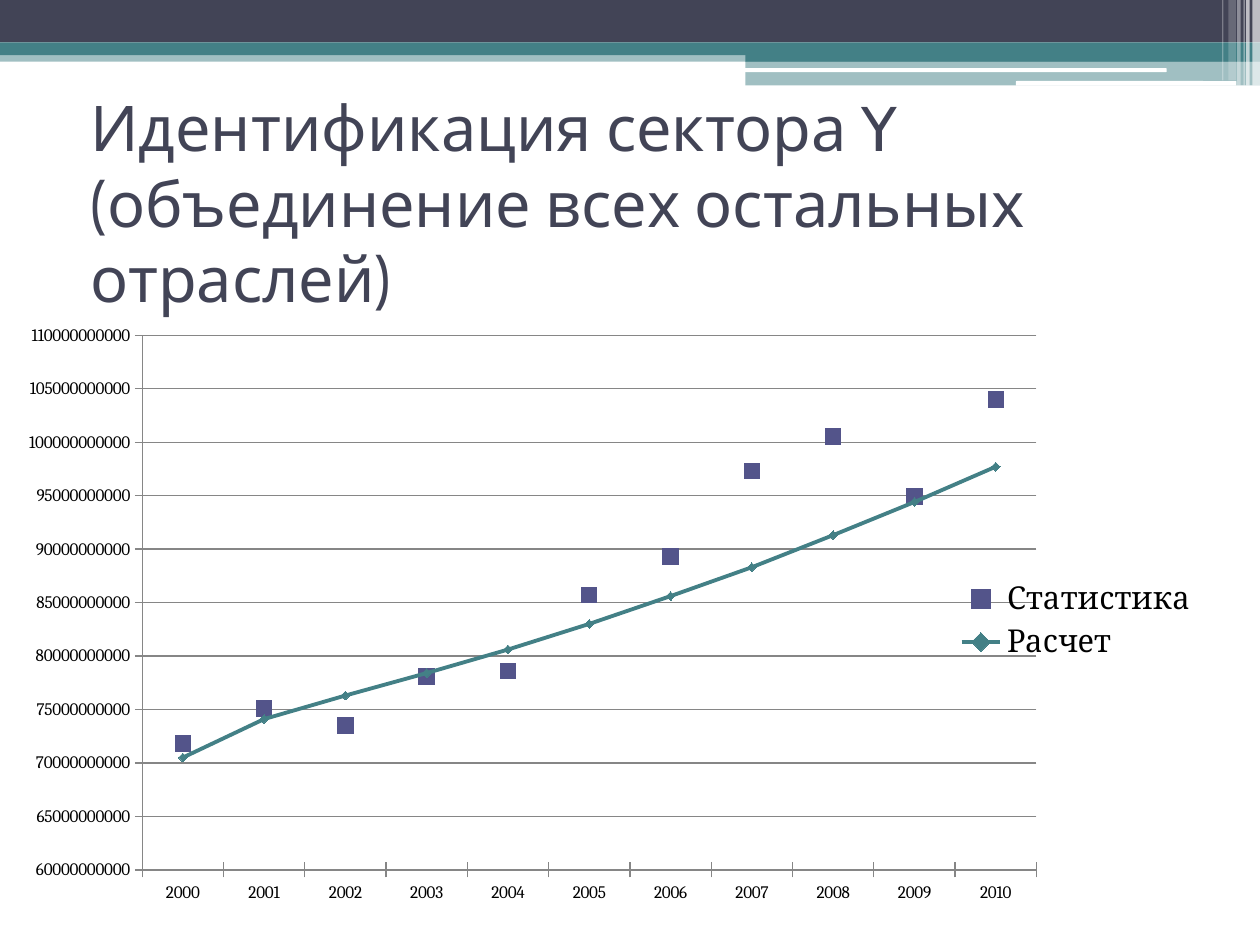
from pptx import Presentation
from pptx.chart.data import CategoryChartData
from pptx.dml.color import RGBColor
from pptx.enum.chart import XL_CHART_TYPE, XL_LEGEND_POSITION, XL_MARKER_STYLE, XL_TICK_MARK
from pptx.enum.shapes import MSO_SHAPE
from pptx.enum.text import MSO_ANCHOR, MSO_AUTO_SIZE, PP_ALIGN
from pptx.oxml import parse_xml
from pptx.oxml.ns import nsdecls, qn
from pptx.util import Pt
from lxml import etree

RECT, ROUND = MSO_SHAPE.RECTANGLE, MSO_SHAPE.ROUNDED_RECTANGLE
SQUARE, DIAMOND = XL_MARKER_STYLE.SQUARE, XL_MARKER_STYLE.DIAMOND
LINE, RIGHT = XL_CHART_TYPE.LINE_MARKERS, XL_LEGEND_POSITION.RIGHT
CROSS = XL_TICK_MARK.CROSS
MIDDLE, LEFT, FIXED = MSO_ANCHOR.MIDDLE, PP_ALIGN.LEFT, MSO_AUTO_SIZE.NONE

WHITE = RGBColor(0xFF, 0xFF, 0xFF)
BLACK = RGBColor(0, 0, 0)
SLATE = RGBColor(0x42, 0x44, 0x56)
TEAL = RGBColor(0x43, 0x80, 0x86)
VIOLET = RGBColor(0x53, 0x54, 0x8A)
GRAY = RGBColor(0x86, 0x86, 0x86)

BANDS = [
    (RECT, 0, 28.8, 720, 6.5, TEAL, 50),
    (RECT, 0, 0, 720, 24.3, SLATE, 100),
    (RECT, 0, 24.3, 720, 7.2, TEAL, 100),
    (RECT, 426, 28.1, 294, 7.2, TEAL, 100),
    (RECT, 426, 34.9, 294, 14, TEAL, 50),
    (ROUND, 425.5, 39, 241.2, 2.2, WHITE, 100),
    (ROUND, 580.5, 46.3, 126, 2.7, WHITE, 100),
]
STRIPES = [
    (715.7, 4.3, 49, 65), (712.1, 2, 49, 65), (710.6, 0.7, 49, 60),
    (707, 2, 49, 40), (702, 4.3, 46, 20), (698.4, 0.7, 46, 30),
]
BILLION = 10 ** 9
YEARS = [str(year) for year in range(2000, 2011)]
FACTS = [71.8, 75.1, 73.5, 78.1, 78.6, 85.7, 89.3, 97.3, 100.5, 94.9, 104]
MODEL = [70.5, 74.1, 76.3, 78.4, 80.6, 83, 85.6, 88.3, 91.3, 94.4, 97.7]
PLOT = {"x": 0.075, "y": 0.017, "w": 0.774, "h": 0.905}


def add_band(slide, kind, left, top, width, height, color, alpha):
    """Draw one borderless band with the given opacity in percent."""
    band = slide.shapes.add_shape(kind, Pt(left), Pt(top), Pt(width), Pt(height))
    band.shadow.inherit = False
    band.line.fill.background()
    band.fill.solid()
    band.fill.fore_color.rgb = color
    if alpha < 100:
        tint = band.fill._xPr.find(".//" + qn("a:srgbClr"))
        etree.SubElement(tint, qn("a:alpha")).set("val", str(alpha * 1000))


def set_title(slide, text):
    """Fill and place the title."""
    title = slide.shapes.title
    title.left, title.top, title.width, title.height = Pt(44.6), Pt(73.4), Pt(648), Pt(84.2)
    frame = title.text_frame
    frame.text = text
    frame.word_wrap = True
    frame.auto_size = FIXED
    frame.vertical_anchor = MIDDLE
    para = frame.paragraphs[0]
    para.alignment = LEFT
    font = para.runs[0].font
    font.name, font.size, font.color.rgb = "Cabin", Pt(36), SLATE


def style_font(font, size):
    """Apply the chart font."""
    font.name, font.size, font.color.rgb = "Cambria", Pt(size), BLACK


def style_row(row, color, style, size):
    """Colour the markers of one series."""
    row.smooth = False
    mark = row.marker
    mark.style, mark.size = style, size
    mark.format.fill.solid()
    mark.format.fill.fore_color.rgb = color
    mark.format.line.color.rgb = color


def style_axis(axis):
    """Set the ticks and line of one axis."""
    axis.major_tick_mark = CROSS
    axis.format.line.color.rgb = GRAY
    style_font(axis.tick_labels.font, 10)


def fix_plot(chart):
    """Pin the inner plot area to fixed fractions of the chart."""
    area = chart._chartSpace.chart.plotArea
    for old in area.findall(qn("c:layout")):
        area.remove(old)
    rules = '<c:layoutTarget val="inner"/><c:xMode val="edge"/><c:yMode val="edge"/>'
    sizes = "".join(f'<c:{key} val="{val}"/>' for key, val in PLOT.items())
    area.insert(0, parse_xml(
        f'<c:layout {nsdecls("c")}><c:manualLayout>{rules}{sizes}</c:manualLayout></c:layout>'))


def add_graph(slide):
    """Plot the statistics against the calculated trend."""
    data = CategoryChartData(number_format="General")
    data.categories = YEARS
    for name, vals in (("Статистика", FACTS), ("Расчет", MODEL)):
        data.add_series(name, [round(val * BILLION) for val in vals])
    chart = slide.shapes.add_chart(
        LINE, Pt(16.6), Pt(185.8), Pt(675.4), Pt(337.7), data).chart
    chart.has_title = False
    style_font(chart.font, 10)
    chart.plots[0].vary_by_categories = False
    facts, model = chart.plots[0].series
    style_row(facts, VIOLET, SQUARE, 9)
    facts.format.line.fill.background()
    style_row(model, TEAL, DIAMOND, 5)
    model.format.line.color.rgb = TEAL
    model.format.line.width = Pt(2.25)
    axis = chart.value_axis
    axis.minimum_scale, axis.maximum_scale = 60 * BILLION, 110 * BILLION
    axis.major_unit = 5 * BILLION
    axis.has_major_gridlines = True
    axis.major_gridlines.format.line.color.rgb = GRAY
    style_axis(axis)
    style_axis(chart.category_axis)
    chart.has_legend = True
    chart.legend.position = RIGHT
    chart.legend.include_in_layout = False
    style_font(chart.legend.font, 18)
    fix_plot(chart)


def main():
    """Build and save the slide."""
    deck = Presentation()
    deck.slide_width, deck.slide_height = Pt(720), Pt(540)
    slide = deck.slides.add_slide(deck.slide_layouts[5])
    for band in BANDS:
        add_band(slide, *band)
    for left, width, height, alpha in STRIPES:
        add_band(slide, RECT, left, 0, width, height, WHITE, alpha)
    set_title(slide, "Идентификация сектора Y (объединение всех остальных отраслей)")
    add_graph(slide)
    deck.save("out.pptx")


if __name__ == "__main__":
    main()
